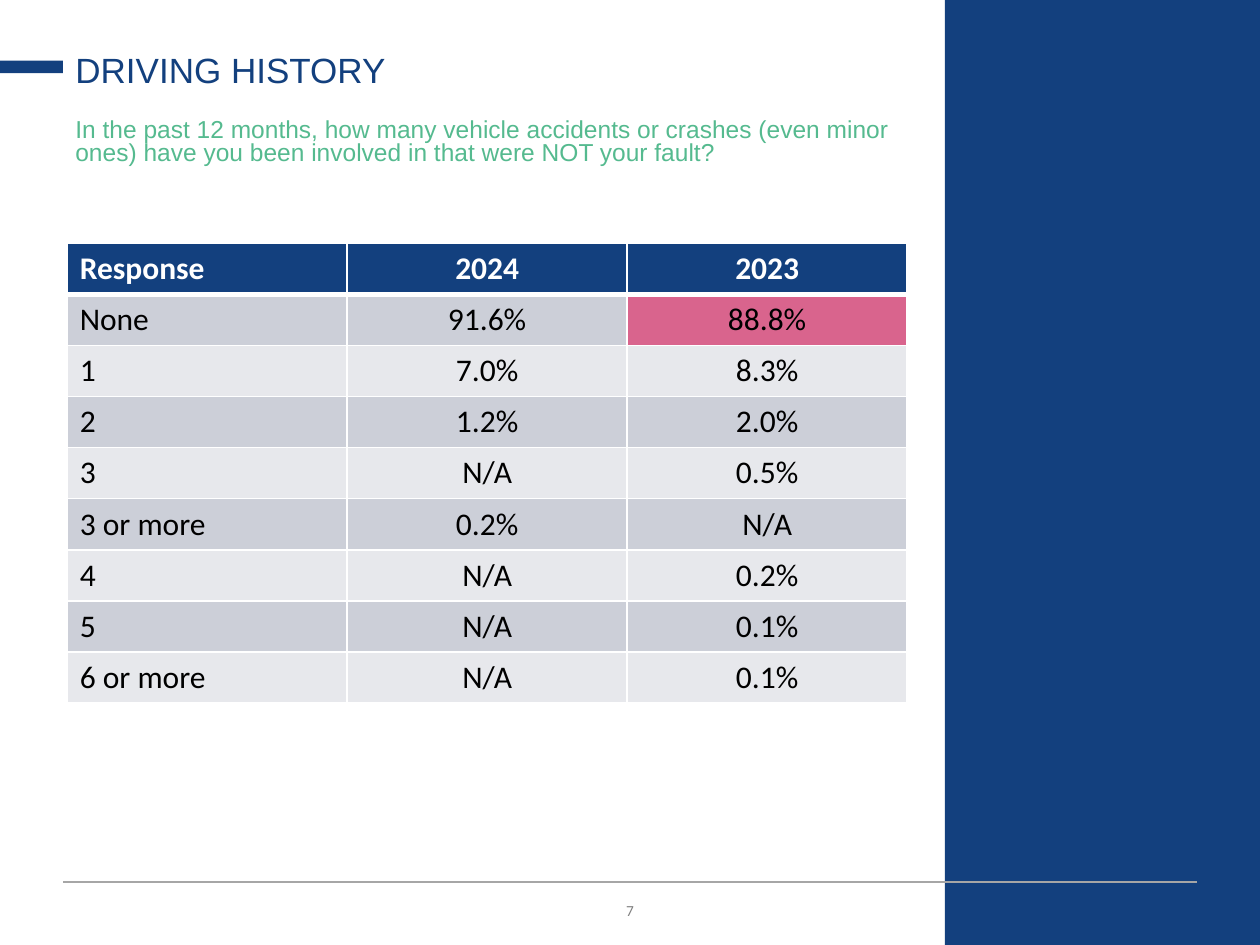
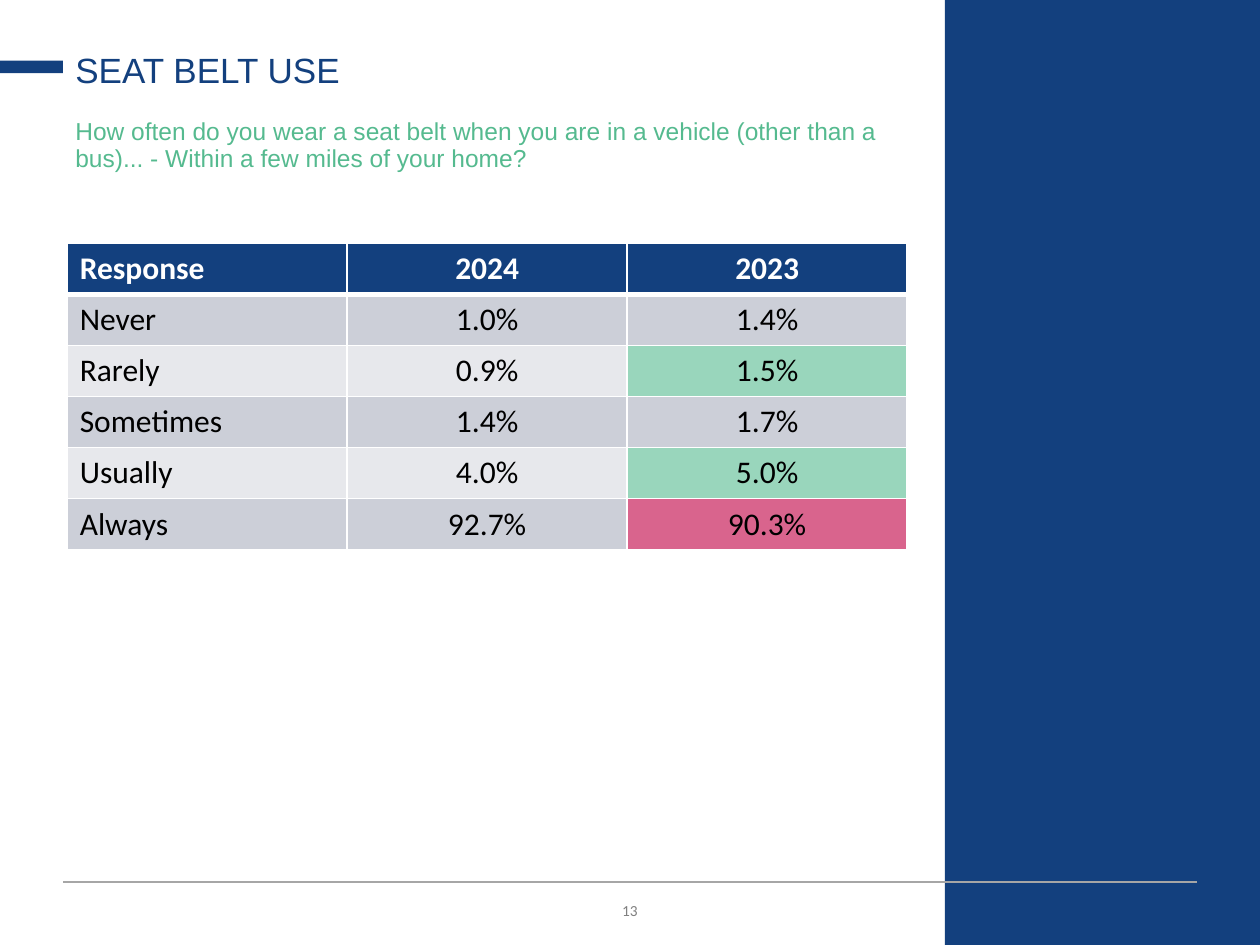
import pptx
import pptx.dml.color
import pptx.enum.shapes
import pptx.enum.text
import pptx.oxml
import pptx.oxml.ns
import pptx.util

Pt = pptx.util.Pt
RGBColor = pptx.dml.color.RGBColor
ALIGN = pptx.enum.text.PP_ALIGN
ANCHOR = pptx.enum.text.MSO_ANCHOR

NAVY = RGBColor(0x13, 0x40, 0x7E)
GREEN = RGBColor(0x55, 0xBA, 0x8F)
WHITE = RGBColor(0xFF, 0xFF, 0xFF)
BLACK = RGBColor(0, 0, 0)
NUMBER_GRAY = RGBColor(0x80, 0x80, 0x80)
RULE_GRAY = RGBColor(0xA6, 0xA6, 0xA6)
DARK_ROW = RGBColor(0xCC, 0xCF, 0xD8)
LIGHT_ROW = RGBColor(0xE7, 0xE8, 0xEC)
PINK_MARK = RGBColor(0xD9, 0x64, 0x8D)
GREEN_MARK = RGBColor(0x99, 0xD6, 0xBC)

PAGE_WIDTH, PAGE_HEIGHT = 720, 540
MARGIN = 36
BAND_LEFT = 540
TEXT_WIDTH = 482.4
RULE_TOP = 504
TABLE_LEFT, TABLE_TOP = 38.4, 139
COLUMN_WIDTH, ROW_HEIGHT = 160, 29.2
HEADER = ("Response", "2024", "2023")


class SurveyDeck:
    """Holds the survey style and the slide being built."""

    def __init__(self):
        self.deck = pptx.Presentation()
        self.deck.slide_width = Pt(PAGE_WIDTH)
        self.deck.slide_height = Pt(PAGE_HEIGHT)
        self.page = None

    def start_page(self, number, title, question, question_spacing):
        self.page = self.deck.slides.add_slide(self.deck.slide_layouts[6])
        para = self.text(str(number), (MARGIN, 508.3, PAGE_WIDTH - 2 * MARGIN, 21.6),
                         "Calibri", 11, NUMBER_GRAY, ANCHOR.MIDDLE)
        para.alignment = ALIGN.CENTER
        para._p.pPr.find(pptx.oxml.ns.qn("a:defRPr")).set("cap", "small")
        self.block(BAND_LEFT, 0, PAGE_WIDTH - BAND_LEFT, PAGE_HEIGHT)
        self.rule(MARGIN, PAGE_WIDTH - MARGIN, RULE_TOP)
        self.block(0, 34.6, MARGIN, 7.2)
        self.text(question, (MARGIN, 64.8, TEXT_WIDTH, 48.2), "Arial", 14, GREEN,
                  ANCHOR.TOP, question_spacing)
        self.text(title, (MARGIN, 20.9, TEXT_WIDTH, 34.6), "Arial", 20, NAVY,
                  ANCHOR.BOTTOM, 0.9)

    def style(self, para, family, size, colour, bold=False):
        para.font.name = family
        para.font.size = Pt(size)
        para.font.bold = bold
        para.font.color.rgb = colour

    def text(self, words, place, family, size, colour, anchor, spacing=1.0):
        box = self.page.shapes.add_textbox(*map(Pt, place))
        frame = box.text_frame
        frame.word_wrap = True
        frame.vertical_anchor = anchor
        para = frame.paragraphs[0]
        para.text = words
        para.line_spacing = spacing
        self.style(para, family, size, colour)
        return para

    def block(self, left, top, width, height):
        shape = self.page.shapes.add_shape(
            pptx.enum.shapes.MSO_SHAPE.RECTANGLE, Pt(left), Pt(top), Pt(width), Pt(height))
        shape.shadow.inherit = False
        shape.fill.solid()
        shape.fill.fore_color.rgb = NAVY
        shape.line.fill.background()

    def rule(self, left, right, top):
        line = self.page.shapes.add_connector(
            pptx.enum.shapes.MSO_CONNECTOR.STRAIGHT, Pt(left), Pt(top), Pt(right), Pt(top))
        line.line.color.rgb = RULE_GRAY
        line.line.width = Pt(0.75)
        properties = line._element.spPr
        properties.append(properties.makeelement(pptx.oxml.ns.qn("a:effectLst"), {}))

    def borders(self, cell, top, bottom):
        properties = cell._tc.get_or_add_tcPr()
        for side, width in (("L", 1), ("R", 1), ("T", top), ("B", bottom)):
            properties.append(pptx.oxml.parse_xml(
                f'<a:ln{side} {pptx.oxml.ns.nsdecls("a")} w="{Pt(width)}">'
                f'<a:solidFill><a:srgbClr val="{WHITE}"/></a:solidFill></a:ln{side}>'))

    def table(self, answers, marks):
        """Draws the answers; marks maps a response to the colour of its 2023 cell."""
        rows = [HEADER, *answers]
        table = self.page.shapes.add_table(
            len(rows), len(HEADER), Pt(TABLE_LEFT), Pt(TABLE_TOP),
            Pt(COLUMN_WIDTH * len(HEADER)), Pt(ROW_HEIGHT * len(rows))).table
        for column in table.columns:
            column.width = Pt(COLUMN_WIDTH)
        for row_index, values in enumerate(rows):
            table.rows[row_index].height = Pt(ROW_HEIGHT)
            is_header = row_index == 0
            row_fill = NAVY if is_header else DARK_ROW if row_index % 2 else LIGHT_ROW
            for column_index, value in enumerate(values):
                cell = table.cell(row_index, column_index)
                self.borders(cell, 3 if row_index == 1 else 1, 3 if is_header else 1)
                is_latest = column_index == len(HEADER) - 1
                cell.fill.solid()
                cell.fill.fore_color.rgb = marks.get(values[0], row_fill) if is_latest else row_fill
                para = cell.text_frame.paragraphs[0]
                para.text = value
                para.alignment = ALIGN.CENTER if column_index else ALIGN.LEFT
                self.style(para, "Calibri", 18, WHITE if is_header else BLACK, is_header)


def main():
    survey = SurveyDeck()

    survey.start_page(
        7, "DRIVING HISTORY",
        "In the past 12 months, how many vehicle accidents or crashes (even minor ones) "
        "have you been involved in that were NOT your fault?", 0.8)
    survey.table([
        ("None", "91.6%", "88.8%"),
        ("1", "7.0%", "8.3%"),
        ("2", "1.2%", "2.0%"),
        ("3", "N/A", "0.5%"),
        ("3 or more", "0.2%", "N/A"),
        ("4", "N/A", "0.2%"),
        ("5", "N/A", "0.1%"),
        ("6 or more", "N/A", "0.1%"),
    ], {"None": PINK_MARK})

    survey.start_page(
        13, "SEAT BELT USE",
        "How often do you wear a seat belt when you are in a vehicle (other than a bus)... "
        "- Within a few miles of your home?", 0.9)
    survey.table([
        ("Never", "1.0%", "1.4%"),
        ("Rarely", "0.9%", "1.5%"),
        ("Sometimes", "1.4%", "1.7%"),
        ("Usually", "4.0%", "5.0%"),
        ("Always", "92.7%", "90.3%"),
    ], {"Rarely": GREEN_MARK, "Usually": GREEN_MARK, "Always": PINK_MARK})

    survey.deck.save("out.pptx")


if __name__ == "__main__":
    main()
